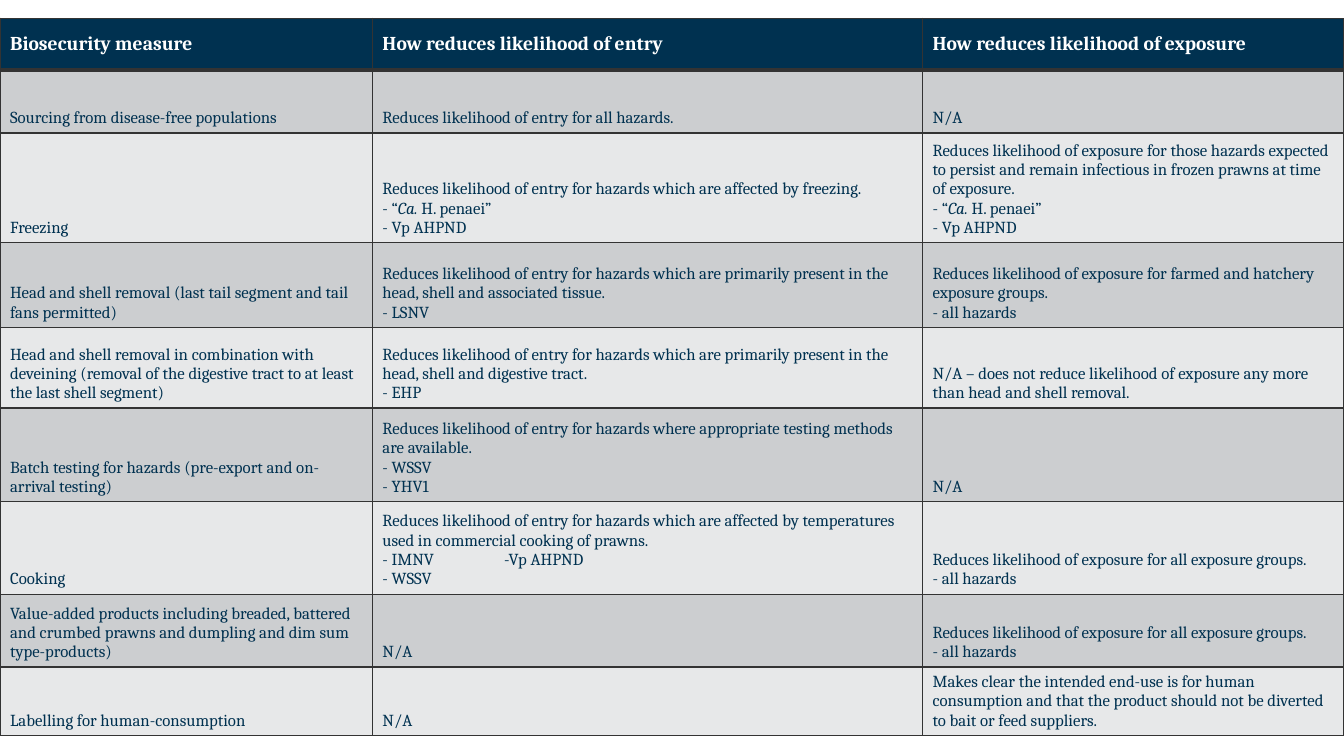
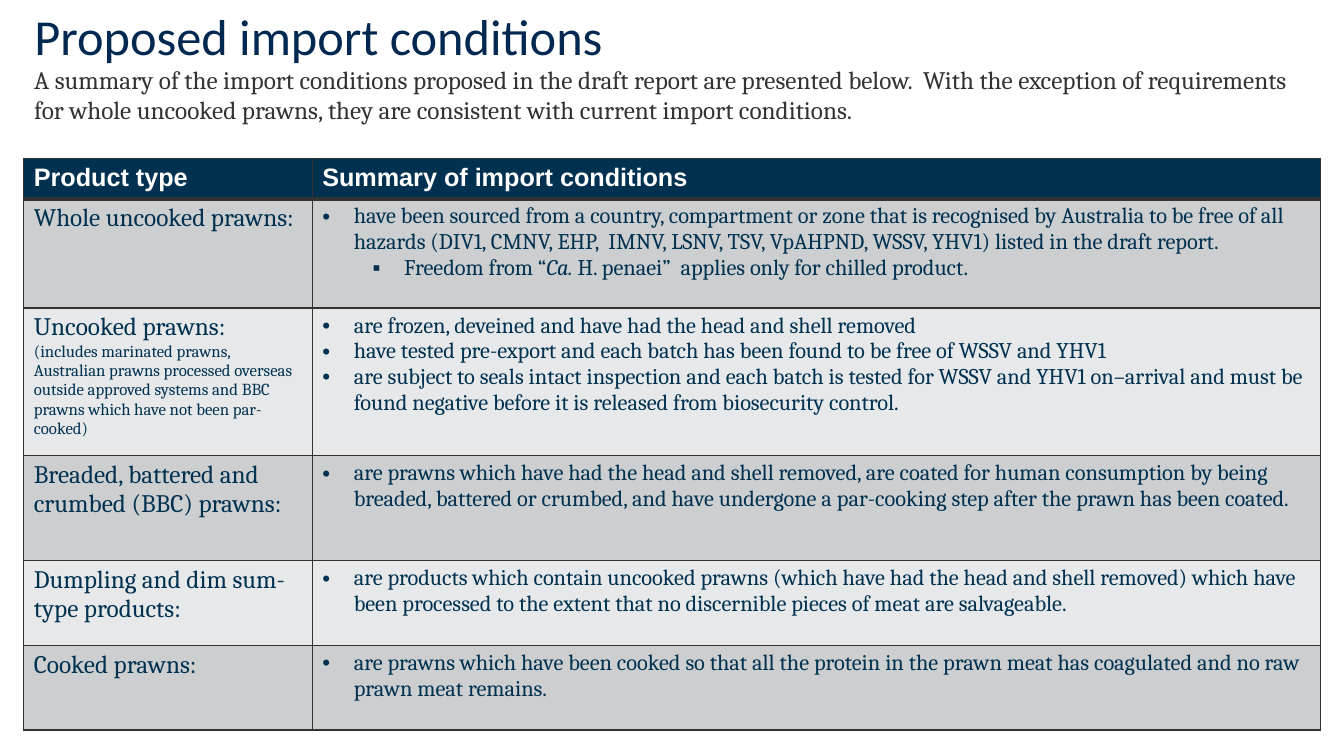
import dataclasses

import lxml.etree
import pptx
import pptx.dml.color
import pptx.enum.text
import pptx.oxml.ns
import pptx.util

Pt = pptx.util.Pt
ANCHOR = pptx.enum.text.MSO_ANCHOR

COLOURS = {
    "navy": "003150",
    "title": "002850",
    "grey": "333333",
    "dark band": "CCCED0",
    "light band": "E7E8E9",
    "white": "FFFFFF",
}
SERIF = "Cambria"
PAGE_WIDTH, PAGE_HEIGHT = 960, 540
BULLETS = "•▪"  # one mark for each level
BULLET_HANG, LEVEL_STEP = 22.5, 36
TAB_STOP = 87


@dataclasses.dataclass
class Line:
    """One paragraph; *stars* mark italic words."""
    text: str
    size: float = 12
    colour: str = "navy"
    font: str = SERIF
    bold: bool = False
    bullet_level: int | None = None


# Content
MEASURES_HEADER = ["Biosecurity measure", "How reduces likelihood of entry",
                   "How reduces likelihood of exposure"]
MEASURES = [
    ["Sourcing from disease-free populations",
     "Reduces likelihood of entry for all hazards.",
     "N/A"],
    ["Freezing",
     "Reduces likelihood of entry for hazards which are affected by freezing.\n"
     "- “*Ca.* H. penaei”\n- Vp AHPND",
     "Reduces likelihood of exposure for those hazards expected to persist and "
     "remain infectious in frozen prawns at time of exposure.\n"
     "- “*Ca.* H. penaei”\n- Vp AHPND"],
    ["Head and shell removal (last tail segment and tail fans permitted)",
     "Reduces likelihood of entry for hazards which are primarily present in the "
     "head, shell and associated tissue.\n- LSNV",
     "Reduces likelihood of exposure for farmed and hatchery exposure groups.\n"
     "- all hazards"],
    ["Head and shell removal in combination with deveining (removal of the "
     "digestive tract to at least the last shell segment)",
     "Reduces likelihood of entry for hazards which are primarily present in the "
     "head, shell and digestive tract.\n- EHP",
     "N/A – does not reduce likelihood of exposure any more than head and shell "
     "removal."],
    ["Batch testing for hazards (pre-export and on-arrival testing)",
     "Reduces likelihood of entry for hazards where appropriate testing methods "
     "are available.\n- WSSV\n- YHV1",
     "N/A"],
    ["Cooking",
     "Reduces likelihood of entry for hazards which are affected by temperatures "
     "used in commercial cooking of prawns.\n- IMNV\t-Vp AHPND\n- WSSV",
     "Reduces likelihood of exposure for all exposure groups.\n- all hazards"],
    ["Value-added products including breaded, battered and crumbed prawns and "
     "dumpling and dim sum type-products)",
     "N/A",
     "Reduces likelihood of exposure for all exposure groups.\n- all hazards"],
    ["Labelling for human-consumption",
     "N/A",
     "Makes clear the intended end-use is for human consumption and that the "
     "product should not be diverted to bait or feed suppliers."],
]

INTRODUCTION = (
    "A summary of the import conditions proposed in the draft report are presented "
    "below.  With the exception of requirements for whole uncooked prawns, they are "
    "consistent with current import conditions.")
CONDITIONS_HEADER = ["Product type", "Summary of import conditions"]
# Product, note under it, conditions as (level, text)
CONDITIONS = [
    ("Whole uncooked prawns:", None, [
        (0, "have been sourced from a country, compartment or zone that is "
            "recognised by Australia to be free of all hazards (DIV1, CMNV, EHP,  "
            "IMNV, LSNV, TSV, VpAHPND, WSSV, YHV1) listed in the draft report."),
        (1, "Freedom from “*Ca.* H. penaei”  applies only for chilled product.")]),
    ("Uncooked prawns:",
     "(includes marinated prawns, Australian prawns processed overseas outside "
     "approved systems and BBC prawns which have not been par-cooked)", [
         (0, "are frozen, deveined and have had the head and shell removed"),
         (0, "have tested pre-export and each batch has been found to be free of "
             "WSSV and YHV1"),
         (0, "are subject to seals intact inspection and each batch is tested for "
             "WSSV and YHV1 on–arrival and must be found negative before it is "
             "released from biosecurity control.")]),
    ("Breaded, battered and crumbed (BBC) prawns:", None, [
        (0, "are prawns which have had the head and shell removed, are coated for "
            "human consumption by being breaded, battered or crumbed, and have "
            "undergone a par-cooking step after the prawn has been coated.")]),
    ("Dumpling and dim sum-type products:", None, [
        (0, "are products which contain uncooked prawns (which have had the head "
            "and shell removed) which have been processed to the extent that no "
            "discernible pieces of meat are salvageable.")]),
    ("Cooked prawns:", None, [
        (0, "are prawns which have been cooked so that all the protein in the prawn "
            "meat has coagulated and no raw prawn meat remains.")]),
]


def rgb(name):
    return pptx.dml.color.RGBColor.from_string(COLOURS[name])


def add_xml(parent, tag, **attributes):
    return lxml.etree.SubElement(
        parent, pptx.oxml.ns.qn(tag),
        {name: str(value) for name, value in attributes.items()})


def add_bullet(para, level):
    para.level = level
    properties = para._p.get_or_add_pPr()
    properties.set("marL", str(Pt(BULLET_HANG + level * LEVEL_STEP)))
    properties.set("indent", str(-Pt(BULLET_HANG)))
    add_xml(properties, "a:buFont", typeface="Arial")
    add_xml(properties, "a:buChar", char=BULLETS[level])


def add_tab_stop(para):
    stops = add_xml(para._p.get_or_add_pPr(), "a:tabLst")
    add_xml(stops, "a:tab", pos=Pt(TAB_STOP), algn="l")


def write_lines(frame, lines):
    for index, line in enumerate(lines):
        para = frame.add_paragraph() if index else frame.paragraphs[0]
        para.alignment = pptx.enum.text.PP_ALIGN.LEFT
        if line.bullet_level is not None:
            add_bullet(para, line.bullet_level)
        if "\t" in line.text:
            add_tab_stop(para)
        para.font.name = line.font
        para.font.size = Pt(line.size)
        para.font.bold = line.bold
        para.font.color.rgb = rgb(line.colour)
        for position, words in enumerate(line.text.split("*")):
            span = para.add_run()
            span.text = words
            if position % 2:
                span.font.italic = True


def set_borders(cell, row):
    """Thin lines all round, with a thick one under the header row."""
    widths = {"L": 1, "R": 1, "T": 3 if row == 1 else 1, "B": 3 if row == 0 else 1}
    properties = cell._tc.get_or_add_tcPr()
    for side, width in widths.items():
        border = add_xml(properties, "a:ln" + side, w=Pt(width))
        add_xml(add_xml(border, "a:solidFill"), "a:srgbClr", val=COLOURS["grey"])


def add_banded_table(page, left, top, widths, heights, rows, header_anchor, body_anchor):
    """Each entry of rows is a list of cells, each cell a list of lines."""
    table = page.shapes.add_table(
        len(heights), len(widths), Pt(left), Pt(top),
        Pt(sum(widths)), Pt(sum(heights))).table
    for column, width in zip(table.columns, widths):
        column.width = Pt(width)
    for row, (height, cells) in enumerate(zip(heights, rows)):
        table.rows[row].height = Pt(height)
        band = "navy" if row == 0 else "dark band" if row % 2 else "light band"
        for column, lines in enumerate(cells):
            cell = table.cell(row, column)
            set_borders(cell, row)
            cell.fill.solid()
            cell.fill.fore_color.rgb = rgb(band)
            cell.vertical_anchor = body_anchor if row else header_anchor
            write_lines(cell.text_frame, lines)


def header_cells(labels, size, font):
    return [[Line(label, size, "white", font, bold=True)] for label in labels]


def place_text(shape, left, top, width, height, line):
    shape.left, shape.top, shape.width, shape.height = map(Pt, (left, top, width, height))
    frame = shape.text_frame
    frame.word_wrap = True
    frame.auto_size = pptx.enum.text.MSO_AUTO_SIZE.NONE
    frame.vertical_anchor = ANCHOR.TOP
    frame.margin_left = frame.margin_right = frame.margin_top = frame.margin_bottom = 0
    write_lines(frame, [line])
    return frame


def build_measures(deck):
    page = deck.slides.add_slide(deck.slide_layouts[6])
    rows = [header_cells(MEASURES_HEADER, 14, SERIF)]
    rows += [[[Line(text) for text in entry.split("\n")] for entry in measure]
             for measure in MEASURES]
    add_banded_table(page, 0, 13, [266, 393, 301],
                     [37, 45, 78.5, 60.5, 57.5, 67, 66, 52, 49],
                     rows, ANCHOR.MIDDLE, ANCHOR.BOTTOM)


def build_conditions(deck):
    page = deck.slides.add_slide(deck.slide_layouts[5])
    # Title and introduction
    title = place_text(page.shapes.title, 24.5, 18.5, 802, 27.5,
                       Line("Proposed import conditions", 36, "title", "Calibri"))
    title.paragraphs[0].line_spacing = Pt(28)
    box = page.shapes.add_textbox(0, 0, 0, 0)
    place_text(box, 24.5, 46, 911, 40, Line(INTRODUCTION, 18, "grey"))
    # Table of conditions by product
    rows = [header_cells(CONDITIONS_HEADER, 18, "Arial")]
    for product, note, conditions in CONDITIONS:
        product_lines = [Line(product, 18)] + ([Line(note)] if note else [])
        rows.append([product_lines, [Line(text, 16, bullet_level=level)
                                     for level, text in conditions]])
    widths = [206, 720]
    add_banded_table(page, (PAGE_WIDTH - sum(widths)) / 2, 113, widths,
                     [29, 78, 105.5, 75, 60.5, 60.5], rows, ANCHOR.TOP, ANCHOR.TOP)


def main():
    deck = pptx.Presentation()
    deck.slide_width, deck.slide_height = Pt(PAGE_WIDTH), Pt(PAGE_HEIGHT)
    build_measures(deck)
    build_conditions(deck)
    deck.save("out.pptx")


if __name__ == "__main__":
    main()
